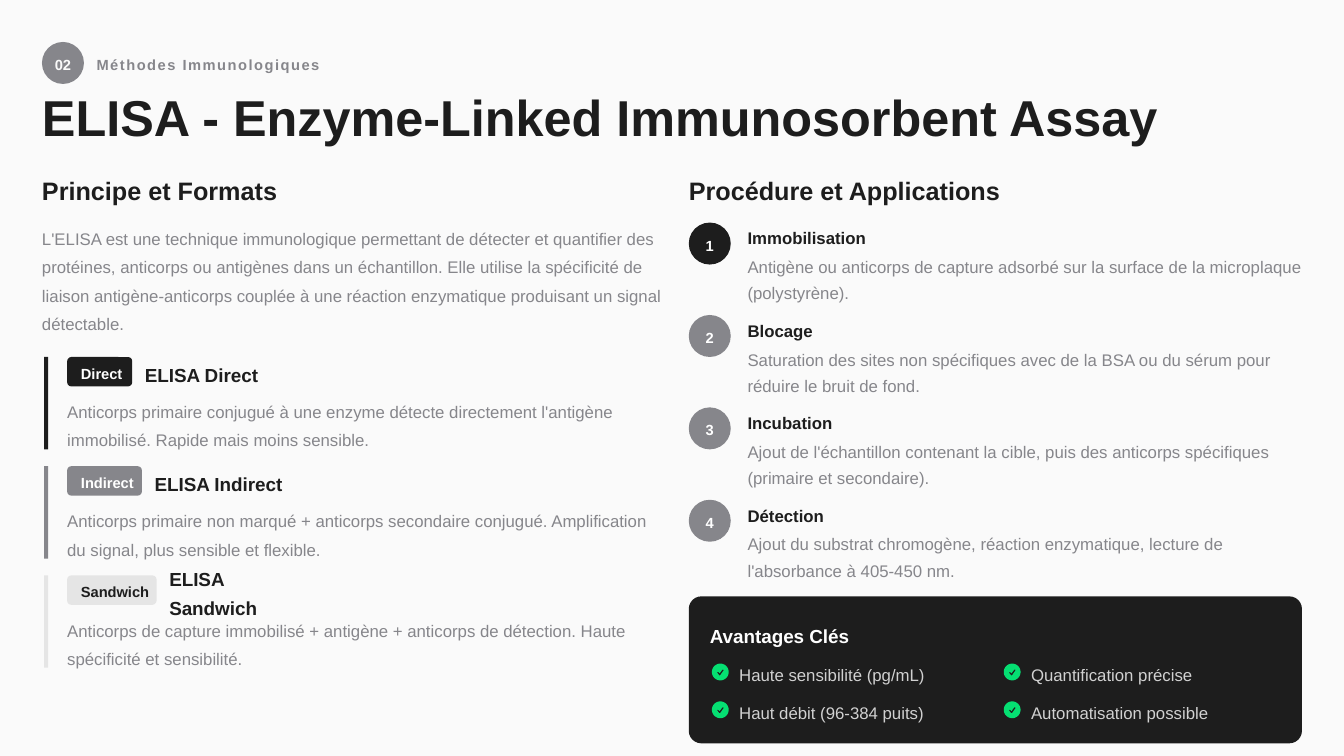
from math import cos, pi, sin

from lxml import etree
from pptx import Presentation
from pptx.dml.color import RGBColor
from pptx.enum.shapes import MSO_SHAPE as Shape
from pptx.enum.text import MSO_ANCHOR as Anchor, MSO_AUTO_SIZE as Fit, PP_ALIGN as Align
from pptx.oxml.ns import qn
from pptx.util import Inches, Pt

INK = RGBColor(0x1D, 0x1D, 0x1D)
GREY = RGBColor(0x86, 0x86, 0x8B)
PALE = RGBColor(0xE5, 0xE5, 0xE5)
PAPER = RGBColor(0xFA, 0xFA, 0xFA)
WHITE = RGBColor(0xFF, 0xFF, 0xFF)
GREEN = RGBColor(0x05, 0xDF, 0x72)

NUMBER = "02"
SECTION = "Méthodes Immunologiques"
TITLE = "ELISA - Enzyme-Linked Immunosorbent Assay"
HEADINGS = ["Principe et Formats", "Procédure et Applications"]
INTRO = (
    "L'ELISA est une technique immunologique permettant de détecter et quantifier des "
    "protéines, anticorps ou antigènes dans un échantillon. Elle utilise la spécificité de "
    "liaison antigène-anticorps couplée à une réaction enzymatique produisant un signal détectable."
)
FORMATS = [
    ("Direct", 15.5, INK, WHITE, "ELISA Direct", 27.4,
     "Anticorps primaire conjugué à une enzyme détecte directement l'antigène immobilisé. "
     "Rapide mais moins sensible."),
    ("Indirect", 17.8, GREY, WHITE, "ELISA Indirect", 30.6,
     "Anticorps primaire non marqué + anticorps secondaire conjugué. "
     "Amplification du signal, plus sensible et flexible."),
    ("Sandwich", 21.3, PALE, INK, "ELISA Sandwich", 34.8,
     "Anticorps de capture immobilisé + antigène + anticorps de détection. "
     "Haute spécificité et sensibilité."),
]
STEPS = [
    ("Immobilisation", INK,
     "Antigène ou anticorps de capture adsorbé sur la surface de la microplaque (polystyrène)."),
    ("Blocage", GREY,
     "Saturation des sites non spécifiques avec de la BSA ou du sérum pour réduire le bruit de fond."),
    ("Incubation", GREY,
     "Ajout de l'échantillon contenant la cible, puis des anticorps spécifiques (primaire et secondaire)."),
    ("Détection", GREY,
     "Ajout du substrat chromogène, réaction enzymatique, lecture de l'absorbance à 405-450 nm."),
]
BENEFITS_TITLE = "Avantages Clés"
BENEFITS = [
    ["Haute sensibilité (pg/mL)", "Quantification précise"],
    ["Haut débit (96-384 puits)", "Automatisation possible"],
]
TICK = [(700, 400), (490, 700), (440, 700), (310, 540), (360, 480), (460, 580), (630, 350), (690, 360)]

prs = Presentation()
prs.slide_width, prs.slide_height = Inches(40 / 3), Inches(7.5)
UNIT = prs.slide_width / 320
LEFT, RIGHT = 10, 164

slide = prs.slides.add_slide(prs.slide_layouts[5])
slide.background.fill.solid()
slide.background.fill.fore_color.rgb = PAPER


def units(*values):
    return [round(v * UNIT) for v in values]


def write(s, text, size, color, bold=False, spacing=1.2, align=Align.LEFT, inset=0, wrap=True):
    tf = s.text_frame
    tf.auto_size = Fit.NONE
    tf.word_wrap = wrap
    tf.vertical_anchor = Anchor.MIDDLE
    tf.margin_left = tf.margin_right = units(inset)[0]
    tf.margin_top = tf.margin_bottom = 0
    p = tf.paragraphs[0]
    p.alignment, p.line_spacing = align, spacing
    r = p.add_run()
    r.text = text
    r.font.name, r.font.size, r.font.bold = "Arial", Pt(size), bold
    r.font.color.rgb = color
    return r


def label(box, text, size, color, **style):
    return write(slide.shapes.add_textbox(*units(*box)), text, size, color, **style)


def paint(s, color):
    s.shadow.inherit = False
    s.fill.solid()
    s.fill.fore_color.rgb = color
    s.line.fill.background()
    return s


def block(kind, box, color, radius=0):
    s = paint(slide.shapes.add_shape(kind, *units(*box)), color)
    if radius:
        s.adjustments[0] = radius / box[3]
    return s


def disc(x, y, text, fill, color):
    s = block(Shape.OVAL, (x, y, 10, 10), fill)
    write(s, text, 10.5, color, bold=True, align=Align.CENTER, wrap=False)


def tick(x, y, size):
    ring = [(round(500 + 500 * cos(i * pi / 30)), round(500 + 500 * sin(i * pi / 30))) for i in range(60)]
    fb = slide.shapes.build_freeform(*ring[0], scale=size * UNIT / 1000)
    fb.add_line_segments(ring[1:])
    fb.move_to(*TICK[0])
    fb.add_line_segments(TICK[1:])
    paint(fb.convert_to_shape(*units(x, y)), GREEN)


disc(LEFT, 10, NUMBER, GREY, PAPER)
r = label((23, 12.5, 61.5, 5), SECTION, 10.5, GREY, bold=True)
r.font._element.set("spc", "110")

title = slide.shapes.title
title.left, title.top, title.width, title.height = units(LEFT, 23, 306, 12)
write(title, TITLE, 36, INK, bold=True, spacing=0.8)

for x, heading in zip((LEFT, RIGHT), HEADINGS):
    label((x, 41, 149, 8), heading, 18, INK, bold=True, spacing=1.1)

label((LEFT, 53, 148, 26), INTRO, 12, GREY, spacing=1.4)

for i, (tag, tag_w, fill, color, name, name_w, detail) in enumerate(FORMATS):
    y = 85 + 26 * i
    block(Shape.RECTANGLE, (LEFT + 0.5, y, 1, 22), fill)
    badge = block(Shape.ROUNDED_RECTANGLE, (LEFT + 6, y, tag_w, 7), fill, 1)
    write(badge, tag, 10.5, color, bold=True, inset=3, wrap=False)
    label((LEFT + 9 + tag_w, y, name_w, 7), name, 13.5, INK, bold=True, spacing=1.3)
    label((LEFT + 6, y + 9, 142, 13), detail, 12, GREY, spacing=1.4)

for i, (name, fill, detail) in enumerate(STEPS):
    y = 53 + 22 * i
    disc(RIGHT, y, str(i + 1), fill, WHITE)
    label((RIGHT + 14, y, 134, 6), name, 12, INK, bold=True, spacing=1.3)
    label((RIGHT + 14, y + 7, 134, 12), detail, 12, GREY, spacing=1.3)

block(Shape.ROUNDED_RECTANGLE, (RIGHT, 142, 146, 35), INK, 3)
label((RIGHT + 5, 147, 138, 7), BENEFITS_TITLE, 13.5, WHITE, bold=True, spacing=1.3)
for row, benefits in enumerate(BENEFITS):
    for col, benefit in enumerate(benefits):
        x, y = RIGHT + 5.5 + 69.5 * col, 158 + 9 * row
        tick(x, y, 4)
        r = label((x + 6.5, y - 1, 48, 6), benefit, 12, WHITE, spacing=1.3)
        color = r.font._element.find(".//" + qn("a:srgbClr"))
        etree.SubElement(color, qn("a:alpha")).set("val", "80000")

prs.save("out.pptx")
